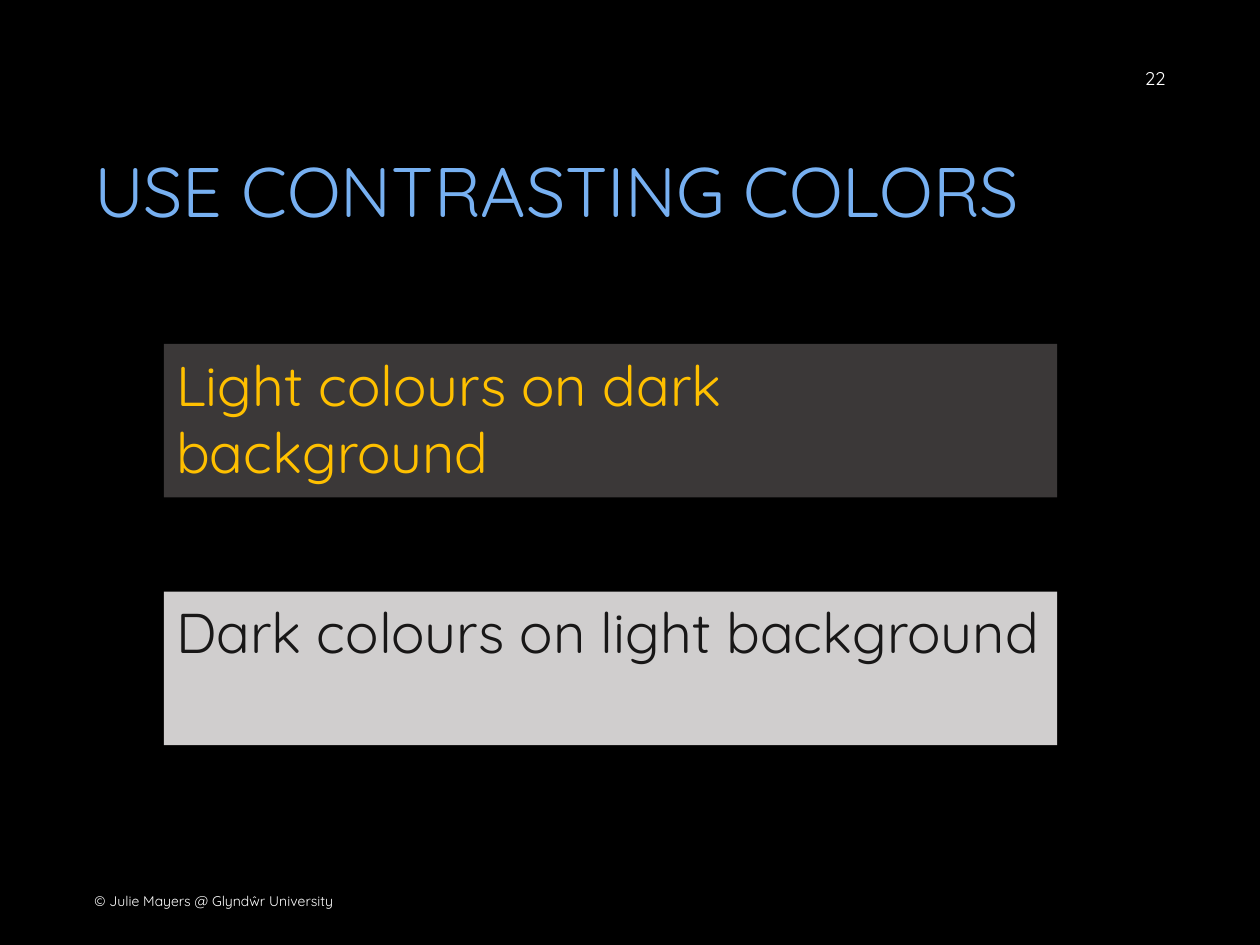
from pptx import Presentation
from pptx.dml.color import RGBColor
from pptx.enum import shapes, text
from pptx.util import Pt

FONT = "Quicksand"
BLACK = RGBColor(0x00, 0x00, 0x00)
WHITE = RGBColor(0xFF, 0xFF, 0xFF)
BLUE = RGBColor(0x77, 0xB0, 0xF1)
AMBER = RGBColor(0xFF, 0xC0, 0x00)
INK = RGBColor(0x18, 0x17, 0x17)
DARK_GREY = RGBColor(0x3B, 0x38, 0x38)
LIGHT_GREY = RGBColor(0xD0, 0xCE, 0xCE)

MARGIN = 46.8
EXAMPLE_LEFT, EXAMPLE_WIDTH, EXAMPLE_HEIGHT = 93.6, 510.5, 87.8
EXAMPLE_TOP, EXAMPLE_STEP = 196.5, 141.5


def write(shape, words, size, color, anchor=text.MSO_ANCHOR.MIDDLE,
          align=text.PP_ALIGN.LEFT):
    frame = shape.text_frame
    frame.word_wrap = True
    frame.auto_size = text.MSO_AUTO_SIZE.NONE
    frame.vertical_anchor = anchor
    paragraph = frame.paragraphs[0]
    paragraph.text = words
    paragraph.alignment = align
    paragraph.font.name = FONT
    paragraph.font.size = Pt(size)
    paragraph.font.color.rgb = color
    return paragraph


def set_title(slide, words):
    title = slide.shapes.title
    title.left, title.top = Pt(MARGIN), Pt(60.5)
    title.width, title.height = Pt(664.5), Pt(101.5)
    write(title, words, 40, BLUE).line_spacing = 0.9


def add_label(slide, words, left, top, width, size, align):
    label = slide.shapes.add_textbox(Pt(left), Pt(top), Pt(width), Pt(28.8))
    write(label, words, size, WHITE, align=align)


def add_example(slide, words, top, fill, color):
    box = slide.shapes.add_shape(
        shapes.MSO_SHAPE.RECTANGLE, Pt(EXAMPLE_LEFT), Pt(top),
        Pt(EXAMPLE_WIDTH), Pt(EXAMPLE_HEIGHT))
    box.shadow.inherit = False
    box.fill.solid()
    box.fill.fore_color.rgb = fill
    box.line.fill.background()
    write(box, words, 32, color, anchor=text.MSO_ANCHOR.TOP)


def main():
    presentation = Presentation()
    presentation.slide_width, presentation.slide_height = Pt(720), Pt(540)
    slide = presentation.slides.add_slide(presentation.slide_layouts[5])
    slide.background.fill.solid()
    slide.background.fill.fore_color.rgb = BLACK

    set_title(slide, "USE CONTRASTING COLORS")
    add_label(slide, "© Julie Mayers @ Glyndŵr University",
              MARGIN, 500.4, 447, 8, text.PP_ALIGN.LEFT)
    examples = [
        ("Light colours on dark background", DARK_GREY, AMBER),
        ("Dark colours on light background", LIGHT_GREY, INK),
    ]
    for index, (words, fill, color) in enumerate(examples):
        add_example(slide, words, EXAMPLE_TOP + index * EXAMPLE_STEP, fill, color)
    add_label(slide, "22", 517.7, 30.2, 155.5, 10.5, text.PP_ALIGN.RIGHT)

    presentation.save("out.pptx")


if __name__ == "__main__":
    main()
